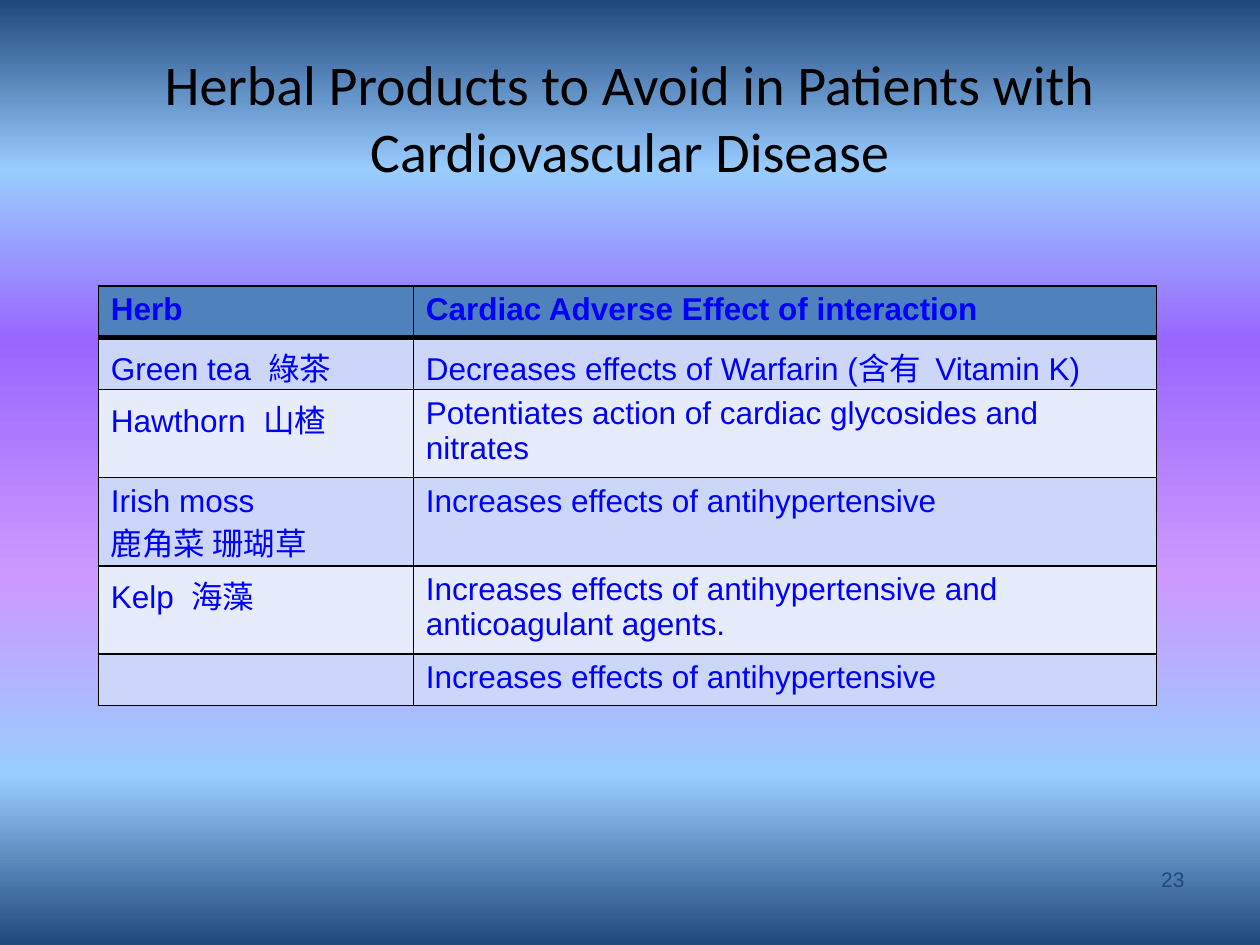
from lxml.etree import SubElement
from pptx import Presentation
from pptx.dml.color import RGBColor
from pptx.enum.text import MSO_ANCHOR, PP_ALIGN
from pptx.oxml.ns import qn
from pptx.util import Pt

PX = 9144
NAVY = RGBColor(0x1F, 0x49, 0x7D)
SKY = RGBColor(0x99, 0xCC, 0xFF)
VIOLET = RGBColor(0x99, 0x66, 0xFF)
LILAC = RGBColor(0xCC, 0x99, 0xFF)
BLACK = RGBColor(0, 0, 0)
BLUE = RGBColor(0, 0, 0xFF)
HEADER = RGBColor(0x4F, 0x81, 0xBD)
BANDS = [RGBColor(0xCB, 0xD6, 0xF9), RGBColor(0xE7, 0xEC, 0xFC)]

BACKGROUND_STOPS = [(0, NAVY), (18, SKY), (36, VIOLET), (61, LILAC), (82, SKY), (100, NAVY)]
COLUMN_WIDTHS = [250, 590]
HERBS = [
    (41, "Herb", "Cardiac Adverse Effect of interaction"),
    (41, "Green tea  綠茶", "Decreases effects of Warfarin (含有  Vitamin K)"),
    (70, "Hawthorn  山楂", "Potentiates action of cardiac glycosides and nitrates"),
    (70, "Irish moss\n鹿角菜 珊瑚草", "Increases effects of antihypertensive"),
    (70, "Kelp  海藻", "Increases effects of antihypertensive and anticoagulant agents."),
    (41, "", "Increases effects of antihypertensive"),
]


def scaled(box):
    return [length * PX for length in box]


def style_font(font, name, size, color, bold=False):
    font.name = name
    font.size = Pt(size)
    font.bold = bold
    font.color.rgb = color


def paint_background(page):
    fill = page.background.fill
    fill.gradient()
    fill.gradient_angle = 270
    stop_list = page.background._cSld.find(".//" + qn("a:gsLst"))
    for stop in list(stop_list):
        stop_list.remove(stop)
    for percent, color in BACKGROUND_STOPS:
        stop = SubElement(stop_list, qn("a:gs"), pos=str(percent * 1000))
        SubElement(stop, qn("a:srgbClr"), val=str(color))


def add_label(page, box, text, alignment, anchor, name, size, color):
    frame = page.shapes.add_textbox(*scaled(box)).text_frame
    frame.word_wrap = True
    frame.vertical_anchor = anchor
    frame.text = text
    para = frame.paragraphs[0]
    para.alignment = alignment
    style_font(para.runs[0].font, name, size, color)


def draw_borders(cell, top, bottom):
    properties = cell._tc.get_or_add_tcPr()
    sides = [("a:lnL", 1), ("a:lnR", 1), ("a:lnT", top), ("a:lnB", bottom)]
    for position, (side, width) in enumerate(sides):
        line = SubElement(properties, qn(side), w=str(Pt(width)))
        fill = SubElement(line, qn("a:solidFill"))
        SubElement(fill, qn("a:srgbClr"), val=str(BLACK))
        properties.insert(position, line)


def add_herb_table(page, box):
    table = page.shapes.add_table(len(HERBS), len(COLUMN_WIDTHS), *scaled(box)).table
    for column, width in zip(table.columns, COLUMN_WIDTHS):
        column.width = width * PX
    for index, (height, *texts) in enumerate(HERBS):
        table.rows[index].height = height * PX
        is_header = index == 0
        for cell, text in zip(table.rows[index].cells, texts):
            cell.text_frame.text = text
            cell.fill.solid()
            cell.fill.fore_color.rgb = HEADER if is_header else BANDS[(index - 1) % 2]
            draw_borders(cell, 3 if index == 1 else 1, 3 if is_header else 1)
            for para in cell.text_frame.paragraphs:
                if not para.runs:
                    para.font.size = Pt(18)
                for span in para.runs:
                    style_font(span.font, "Arial", 18, BLUE, is_header)


def main():
    deck = Presentation()
    deck.slide_width, deck.slide_height = scaled((1000, 750))
    page = deck.slides.add_slide(deck.slide_layouts[6])
    paint_background(page)
    add_label(page, (50, 30, 900, 125),
              "Herbal Products to Avoid in Patients with Cardiovascular Disease",
              PP_ALIGN.CENTER, MSO_ANCHOR.MIDDLE, "Calibri", 32, BLACK)
    add_herb_table(page, (78, 227, 840, 333))
    add_label(page, (717, 683, 233, 50), "23",
              PP_ALIGN.RIGHT, MSO_ANCHOR.TOP, "Arial", 12, NAVY)
    deck.save("out.pptx")


if __name__ == "__main__":
    main()
